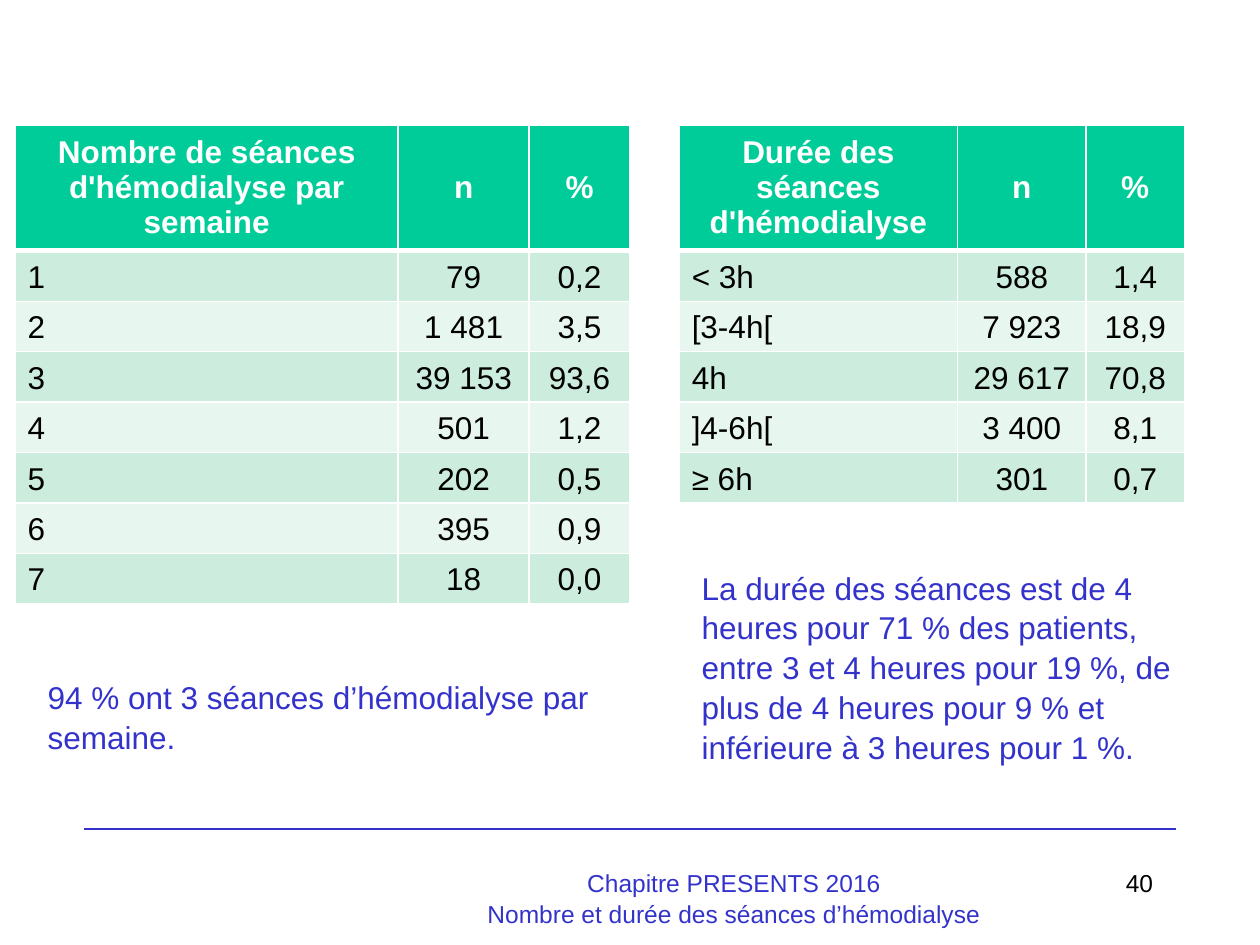
import pptx
import pptx.dml.color
import pptx.enum.shapes
import pptx.enum.text
import pptx.oxml
import pptx.oxml.ns
import pptx.util
from pptx.util import Inches

COLORS = {
    "accent": "3333CC",
    "header": "00CC99",
    "odd_row": "CCECDE",
    "even_row": "E7F6EF",
    "white": "FFFFFF",
    "black": "000000",
}
ALIGN = pptx.enum.text.PP_ALIGN
ANCHOR = pptx.enum.text.MSO_ANCHOR
HEADER_HEIGHT = 1
ROW_HEIGHT = 0.4

SESSIONS_PER_WEEK = [
    ("1", "79", "0,2"),
    ("2", "1 481", "3,5"),
    ("3", "39 153", "93,6"),
    ("4", "501", "1,2"),
    ("5", "202", "0,5"),
    ("6", "395", "0,9"),
    ("7", "18", "0,0"),
]
SESSION_LENGTHS = [
    ("< 3h", "588", "1,4"),
    ("[3-4h[", "7 923", "18,9"),
    ("4h", "29 617", "70,8"),
    ("]4-6h[", "3 400", "8,1"),
    ("≥ 6h", "301", "0,7"),
]


def color(name):
    return pptx.dml.color.RGBColor.from_string(COLORS[name])


def write_text(frame, lines, size, color_name, align=ALIGN.LEFT, bold=False, spacing=None):
    """Write each line as one paragraph."""
    for index, line in enumerate(lines):
        paragraph = frame.paragraphs[0] if index == 0 else frame.add_paragraph()
        paragraph.alignment = align
        if spacing:
            paragraph.line_spacing = spacing
        run = paragraph.add_run()
        run.text = line
        run.font.name = "Arial"
        run.font.size = pptx.util.Pt(size)
        run.font.bold = bold
        run.font.color.rgb = color(color_name)


def add_text(slide, box, lines, size, color_name="accent", align=ALIGN.LEFT):
    shape = slide.shapes.add_textbox(*map(Inches, box))
    shape.text_frame.word_wrap = True
    write_text(shape.text_frame, lines, size, color_name, align, spacing=1.05)


def set_borders(cell, top, bottom):
    """Draw white borders; top and bottom are widths in points."""
    properties = cell._tc.get_or_add_tcPr()
    widths = {"lnL": 1, "lnR": 1, "lnT": top, "lnB": bottom}
    for index, (side, width) in enumerate(widths.items()):
        border = pptx.oxml.parse_xml(
            f'<a:{side} {pptx.oxml.ns.nsdecls("a")} w="{pptx.util.Pt(width)}">'
            f'<a:solidFill><a:srgbClr val="{COLORS["white"]}"/></a:solidFill>'
            f'</a:{side}>'
        )
        properties.insert(index, border)


def fill_cell(cell, lines, row, column):
    is_header = row == 0
    fill_name = "header" if is_header else "odd_row" if row % 2 else "even_row"
    cell.fill.solid()
    cell.fill.fore_color.rgb = color(fill_name)
    cell.vertical_anchor = ANCHOR.MIDDLE if is_header else ANCHOR.BOTTOM
    align = ALIGN.CENTER if is_header or column > 0 else ALIGN.LEFT
    text_color = "white" if is_header else "black"
    write_text(cell.text_frame, lines, 18, text_color, align, bold=is_header)
    set_borders(cell, top=3 if row == 1 else 1, bottom=3 if is_header else 1)


def add_count_table(slide, left, widths, heading, records):
    """Add a table with a label, a count and a percentage column."""
    rows = [(heading, ["n"], ["%"])]
    rows += [[[value] for value in record] for record in records]
    height = HEADER_HEIGHT + ROW_HEIGHT * len(records)
    frame = slide.shapes.add_table(
        len(rows), len(widths), Inches(left), Inches(0.99), Inches(sum(widths)), Inches(height)
    )
    table = frame.table
    for column, width in enumerate(widths):
        table.columns[column].width = Inches(width)
    for row, values in enumerate(rows):
        table.rows[row].height = Inches(ROW_HEIGHT if row else HEADER_HEIGHT)
        for column, lines in enumerate(values):
            fill_cell(table.cell(row, column), lines, row, column)


def add_footer_rule(slide):
    rule = slide.shapes.add_connector(
        pptx.enum.shapes.MSO_CONNECTOR.STRAIGHT,
        Inches(0.67), Inches(6.58), Inches(9.33), Inches(6.58),
    )
    rule.line.color.rgb = color("accent")
    rule.line.width = pptx.util.Pt(1)
    rule._element.spPr.append(pptx.oxml.parse_xml(f'<a:effectLst {pptx.oxml.ns.nsdecls("a")}/>'))


def main():
    presentation = pptx.Presentation()
    presentation.slide_width = Inches(10)
    presentation.slide_height = Inches(7.5)
    slide = presentation.slides.add_slide(presentation.slide_layouts[6])

    add_footer_rule(slide)
    add_text(slide, (7.17, 6.83, 2.08, 0.5), ["40"], 14, "black", ALIGN.RIGHT)
    add_text(
        slide, (3.42, 6.83, 4.81, 0.5),
        ["Chapitre PRESENTS 2016", "Nombre et durée des séances d’hémodialyse"],
        14, align=ALIGN.CENTER,
    )
    add_text(
        slide, (0.28, 5.32, 4.8, 0.71),
        ["94 % ont 3 séances d’hémodialyse par semaine."], 18,
    )
    add_text(
        slide, (5.47, 4.45, 4.17, 1.62),
        ["La durée des séances est de 4 heures pour 71 % des patients, "
         "entre 3 et 4 heures pour 19 %, de plus de 4 heures pour 9 % "
         "et inférieure à 3 heures pour 1 %."], 18,
    )
    add_count_table(
        slide, 0.12, (3.04, 1.04, 0.8),
        ["Nombre de séances", "d'hémodialyse par semaine"], SESSIONS_PER_WEEK,
    )
    add_count_table(
        slide, 5.39, (2.21, 1.02, 0.78),
        ["Durée des séances", "d'hémodialyse"], SESSION_LENGTHS,
    )
    presentation.save("out.pptx")


if __name__ == "__main__":
    main()
